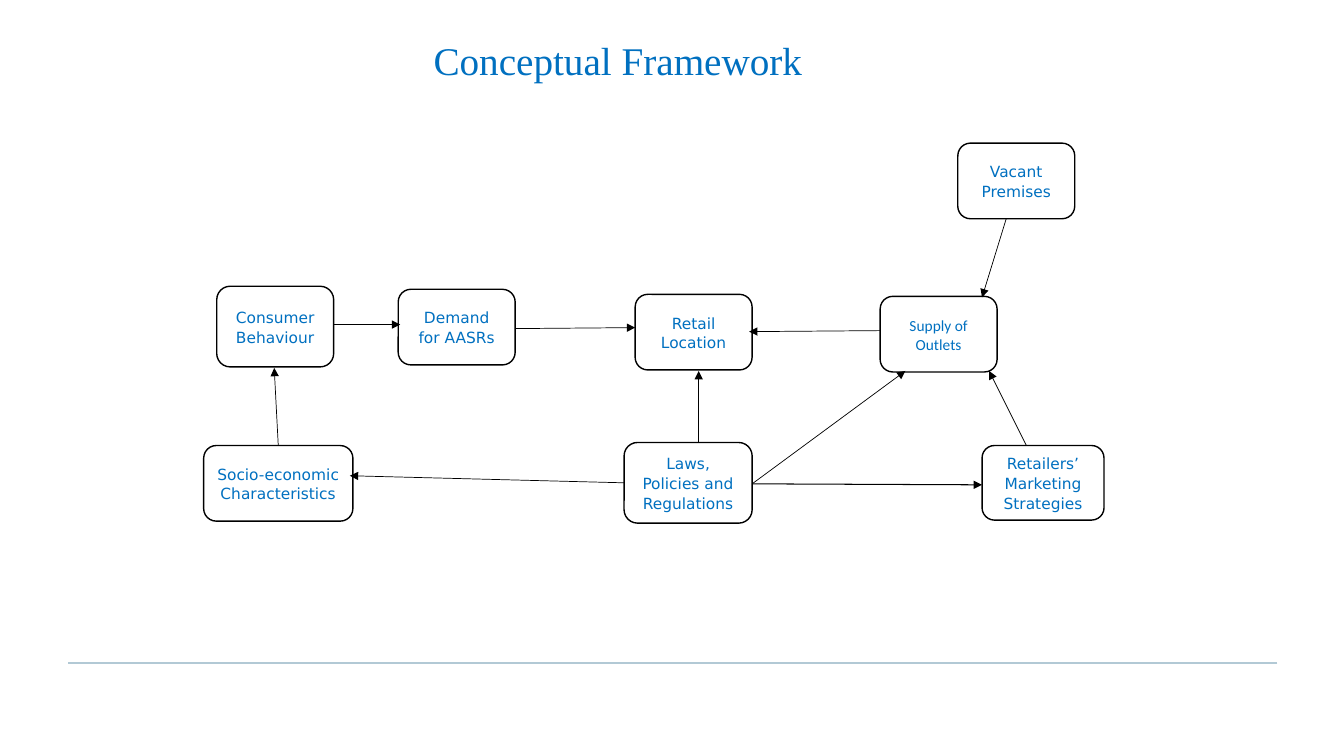
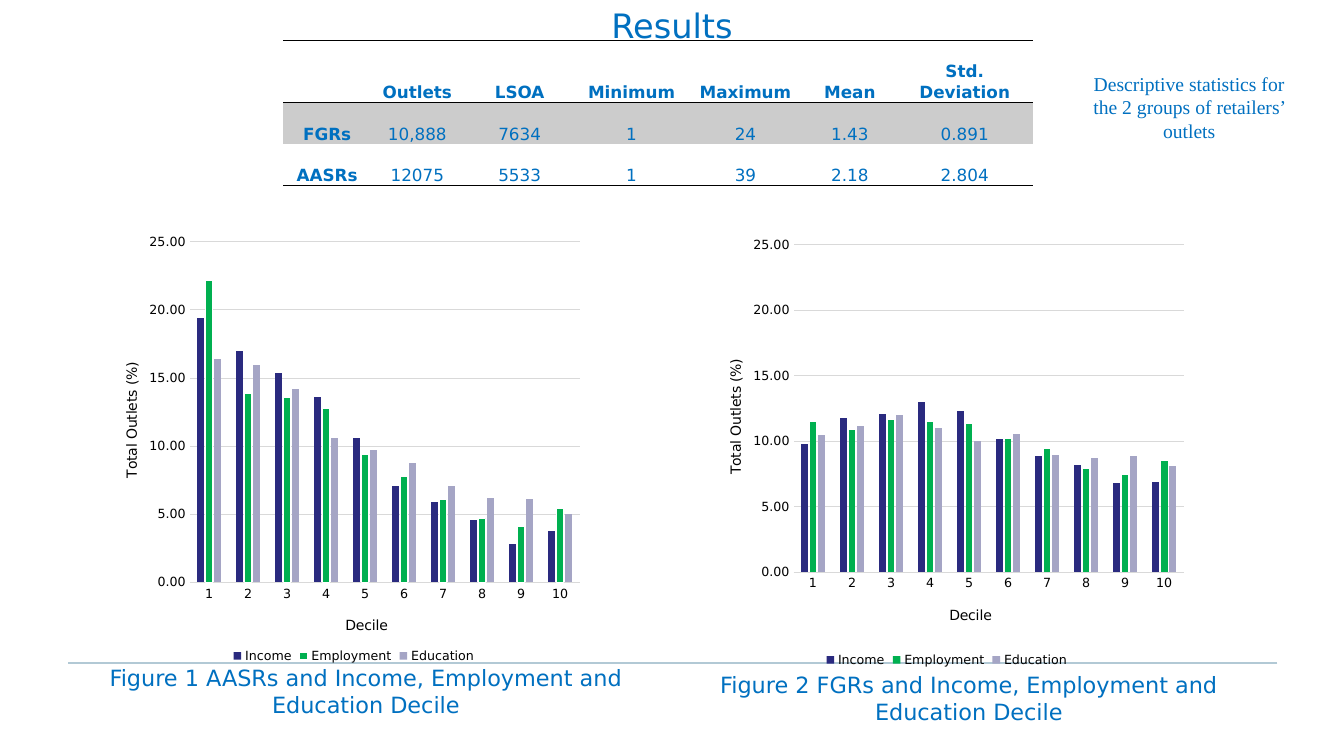
from dataclasses import dataclass

from lxml import etree
from pptx import Presentation
from pptx.chart.data import CategoryChartData
from pptx.dml.color import RGBColor
from pptx.enum.chart import XL_CHART_TYPE, XL_LEGEND_POSITION, XL_TICK_MARK
from pptx.enum.shapes import MSO_CONNECTOR, MSO_SHAPE
from pptx.enum.text import MSO_ANCHOR, MSO_AUTO_SIZE, PP_ALIGN
from pptx.oxml.ns import qn
from pptx.util import Inches, Pt

CLUSTERED = XL_CHART_TYPE.COLUMN_CLUSTERED
LEGEND_BOTTOM = XL_LEGEND_POSITION.BOTTOM
NO_TICKS = XL_TICK_MARK.NONE
STRAIGHT = MSO_CONNECTOR.STRAIGHT
ROUNDED = MSO_SHAPE.ROUNDED_RECTANGLE
TOP, MIDDLE, BOTTOM = MSO_ANCHOR.TOP, MSO_ANCHOR.MIDDLE, MSO_ANCHOR.BOTTOM
LEFT, CENTER = PP_ALIGN.LEFT, PP_ALIGN.CENTER
FIXED_SIZE = MSO_AUTO_SIZE.NONE
TITLE_ONLY = 5
PLAIN_TABLE = "{2D5ABB26-0587-4C30-8999-92F81FD0307C}"


@dataclass(frozen=True)
class Theme:
    """Colours, fonts and type sizes of the deck."""
    text: str = "0070C0"
    ink: str = "000000"
    paper: str = "FFFFFF"
    rule: str = "B2C9D5"
    grid: str = "D9D9D9"
    band: str = "CCCCCC"
    series: tuple = ("2A2A7F", "00B050", "A5A5C5")
    sans: str = "DejaVu Sans"
    serif: str = "Times New Roman"
    narrow: str = "Calibri"
    framework_title: int = 28
    results_title: int = 24
    caption: int = 16
    note: int = 14
    table: int = 12
    node: int = 11
    axis_title: int = 10
    axis: int = 9
    spacing: float = 1.07


THEME = Theme()

NODES = [
    ("Retail Location", (6.3, 2.92, 1.16, 0.75), THEME.sans),
    ("Vacant Premises", (9.5, 1.42, 1.16, 0.75), THEME.sans),
    ("Laws, Policies and Regulations", (6.19, 4.39, 1.27, 0.8), THEME.sans),
    ("Demand for AASRs", (3.95, 2.87, 1.16, 0.75), THEME.sans),
    ("Supply of Outlets", (8.73, 2.94, 1.16, 0.75), THEME.narrow),
    ("Consumer Behaviour", (2.15, 2.84, 1.16, 0.8), THEME.sans),
    ("Socio-economic Characteristics", (2.02, 4.42, 1.48, 0.75), THEME.sans),
    ("Retailers’ Marketing Strategies", (9.74, 4.42, 1.21, 0.74), THEME.sans),
]
ARROWS = [
    ((6.93, 4.39), (6.93, 3.68), 0.5),
    ((6.19, 4.79), (3.47, 4.72), 0.5),
    ((2.76, 4.42), (2.72, 3.65), 0.5),
    ((3.31, 3.22), (3.97, 3.22), 0.5),
    ((5.11, 3.26), (6.3, 3.25), 0.5),
    ((8.73, 3.28), (7.43, 3.29), 0.5),
    ((9.98, 2.17), (9.74, 2.95), 0.5),
    ((7.46, 4.8), (8.98, 3.68), 0.5),
    ((10.18, 4.42), (9.81, 3.68), 0.5),
    ((7.47, 4.8), (9.74, 4.81), 0.75),
]
STATISTICS = [
    ["", "Outlets", "LSOA", "Minimum", "Maximum", "Mean", "Std. Deviation"],
    ["FGRs", "10,888", "7634", "1", "24", "1.43", "0.891"],
    ["AASRs", "12075", "5533", "1", "39", "2.18", "2.804"],
]
COLUMN_WIDTHS = [0.87, 0.92, 1.11, 1.11, 1.15, 0.92, 1.36]
ROW_HEIGHTS = [0.62, 0.41, 0.41]
FIGURES = [
    {
        "frame": (1.07, 2.27, 4.88, 4.35),
        "plot": (1.88, 2.4, 3.87, 3.38),
        "caption": "Figure 1 AASRs and Income, Employment and Education Decile",
        "caption_area": (0.73, 6.54, 5.8, 0.64),
        "outlined": ["Employment"],
        "series": {
            "Income": [19.4, 17, 15.4, 13.6, 10.6, 7.1, 5.9, 4.6, 2.8, 3.8],
            "Employment": [22.2, 13.9, 13.6, 12.8, 9.4, 7.8, 6.1, 4.7, 4.1, 5.4],
            "Education": [16.4, 16, 14.2, 10.6, 9.7, 8.8, 7.1, 6.2, 6.1, 5],
        },
    },
    {
        "frame": (6.95, 2.27, 4.88, 4.39),
        "plot": (7.87, 2.43, 3.87, 3.25),
        "caption": "Figure 2 FGRs and Income, Employment and Education Decile",
        "caption_area": (6.71, 6.61, 5.8, 0.64),
        "outlined": [],
        "series": {
            "Income": [9.8, 11.8, 12.1, 13, 12.3, 10.2, 8.9, 8.2, 6.8, 6.9],
            "Employment": [11.5, 10.9, 11.6, 11.5, 11.3, 10.2, 9.4, 7.9, 7.4, 8.5],
            "Education": [10.5, 11.2, 12, 11, 10, 10.6, 9, 8.7, 8.9, 8.1],
        },
    },
]


def color(value):
    """Turn a hex string into a colour."""
    return RGBColor.from_string(value)


def apply(target, values):
    """Set each attribute named in a dict of format values."""
    for name, value in values.items():
        setattr(target, name, value)


def set_font(font, size, name=THEME.sans, shade=THEME.text, bold=False):
    """Give a font its face, size, weight and colour."""
    apply(font, {"name": name, "size": Pt(size), "bold": bold})
    font.color.rgb = color(shade)


def write(frame, text, size, name=THEME.sans, align=CENTER, anchor=TOP, wrap=True):
    """Put one formatted paragraph in a text frame."""
    apply(frame, {"text": text, "auto_size": FIXED_SIZE, "word_wrap": wrap,
                  "vertical_anchor": anchor})
    para = frame.paragraphs[0]
    para.alignment = align
    set_font(para.font, size, name)
    return para


def add_page(deck, title, area, **style):
    """Add a title-only slide with its title placed and formatted."""
    page = deck.slides.add_slide(deck.slide_layouts[TITLE_ONLY])
    box = page.shapes.title
    apply(box, dict(zip(("left", "top", "width", "height"), map(Inches, area))))
    write(box.text_frame, title, **style)
    return page


def add_line(page, start, end, shade, width, arrow=False):
    """Draw a straight line, with an arrowhead at its end if asked."""
    line = page.shapes.add_connector(STRAIGHT, *map(Inches, start + end))
    line.line.color.rgb = color(shade)
    line.line.width = Pt(width)
    properties = line.element.spPr
    if arrow:
        etree.SubElement(properties.find(qn("a:ln")), qn("a:tailEnd"), type="triangle")
    etree.SubElement(properties, qn("a:effectLst"))
    return line


def add_footer_rule(page):
    """Place the footer line on the layout that the slides share."""
    rule = add_line(page, (12.67, 6.58), (0.67, 6.58), THEME.rule, 1.25)
    page.slide_layout.shapes.element.append(rule.element)


def add_node(page, text, area, name):
    """Draw one rounded box of the framework."""
    node = page.shapes.add_shape(ROUNDED, *map(Inches, area))
    node.shadow.inherit = False
    node.fill.solid()
    node.fill.fore_color.rgb = color(THEME.paper)
    node.line.color.rgb = color(THEME.ink)
    node.line.width = Pt(1)
    para = write(node.text_frame, text, THEME.node, name, anchor=MIDDLE)
    para.line_spacing = THEME.spacing


def add_label(page, text, area, size, name=THEME.sans):
    """Add a centred text box."""
    box = page.shapes.add_textbox(*map(Inches, area))
    write(box.text_frame, text, size, name)


def add_border(cell, side):
    """Draw a thin line on one side of a cell."""
    border = etree.SubElement(cell._tc.get_or_add_tcPr(), qn(f"a:{side}"), w=str(Pt(1)))
    fill = etree.SubElement(border, qn("a:solidFill"))
    etree.SubElement(fill, qn("a:srgbClr"), val=THEME.ink)


def add_statistics(page):
    """Add the table of descriptive statistics."""
    size = (sum(COLUMN_WIDTHS), sum(ROW_HEIGHTS))
    frame = page.shapes.add_table(len(ROW_HEIGHTS), len(COLUMN_WIDTHS),
                                  *map(Inches, (2.81, 0.4) + size))
    for style in frame.element.iter(qn("a:tableStyleId")):
        style.text = PLAIN_TABLE
    table = frame.table
    table.horz_banding = False
    for column, width in zip(table.columns, COLUMN_WIDTHS):
        column.width = Inches(width)
    for row, height in zip(table.rows, ROW_HEIGHTS):
        row.height = Inches(height)
    sides = [("lnT", "lnB"), (), ("lnB",)]
    for row, texts in enumerate(STATISTICS):
        for column, text in enumerate(texts):
            cell = table.cell(row, column)
            apply(cell, {"text": text, "vertical_anchor": BOTTOM,
                         "margin_left": Inches(0.07), "margin_right": Inches(0.07),
                         "margin_top": 0, "margin_bottom": 0})
            for side in sides[row]:
                add_border(cell, side)
            if row == 1:
                cell.fill.solid()
                cell.fill.fore_color.rgb = color(THEME.band)
            else:
                cell.fill.background()
            para = cell.text_frame.paragraphs[0]
            apply(para, {"alignment": CENTER, "line_spacing": THEME.spacing})
            set_font(para.font, THEME.table, bold=row == 0 or column == 0)


def place(part, frame, left, top, width=None, height=None):
    """Fix a chart part at a slide position given in inches."""
    for old in part.findall(qn("c:layout")):
        part.remove(old)
    layout = etree.Element(qn("c:layout"))
    part.insert(0 if part.find(qn("c:tx")) is None else 1, layout)
    manual = etree.SubElement(layout, qn("c:manualLayout"))
    values = {"xMode": "edge", "yMode": "edge",
              "x": (left - frame[0]) / frame[2], "y": (top - frame[1]) / frame[3]}
    if width:
        values = {"layoutTarget": "inner", **values,
                  "w": width / frame[2], "h": height / frame[3]}
    for name, value in values.items():
        etree.SubElement(manual, qn(f"c:{name}"), val=str(value))


def title_axis(axis, text, frame, left, top, rotation):
    """Give an axis a placed and turned title."""
    title = axis.axis_title
    title.text_frame.text = text
    set_font(title.text_frame.paragraphs[0].font, THEME.axis_title, shade=THEME.ink)
    for body in title.element.iter(qn("a:bodyPr")):
        body.set("rot", str(rotation))
    place(title.element, frame, left, top)


def add_figure(page, figure):
    """Add one column chart and its caption."""
    data = CategoryChartData()
    data.categories = [str(decile) for decile in range(1, 11)]
    for name, values in figure["series"].items():
        data.add_series(name, values)
    frame, plot_area = figure["frame"], figure["plot"]
    chart = page.shapes.add_chart(CLUSTERED, *map(Inches, frame), data).chart
    apply(chart, {"has_title": False, "has_legend": True})
    set_font(chart.font, THEME.axis_title, shade=THEME.ink)
    apply(chart.legend, {"position": LEGEND_BOTTOM, "include_in_layout": False})
    set_font(chart.legend.font, THEME.axis, shade=THEME.ink)

    plot = chart.plots[0]
    apply(plot, {"gap_width": 219, "overlap": -27, "vary_by_categories": False})
    for series, shade in zip(plot.series, THEME.series):
        series.format.fill.solid()
        series.format.fill.fore_color.rgb = color(shade)
        if series.name in figure["outlined"]:
            series.format.line.color.rgb = color(THEME.paper)
            series.format.line.width = Pt(0.75)

    deciles, outlets = chart.category_axis, chart.value_axis
    for axis in (deciles, outlets):
        apply(axis, {"major_tick_mark": NO_TICKS, "minor_tick_mark": NO_TICKS})
        set_font(axis.tick_labels.font, THEME.axis, shade=THEME.ink)
    apply(outlets, {"minimum_scale": 0, "maximum_scale": 25, "major_unit": 5})
    apply(outlets.tick_labels, {"number_format": "0.00", "number_format_is_linked": False})
    outlets.format.line.fill.background()
    for line in (deciles.format.line, outlets.major_gridlines.format.line):
        line.color.rgb = color(THEME.grid)
        line.width = Pt(0.75)

    left, top, _, height = plot_area
    title_axis(deciles, "Decile", frame, left + 1.52, top + height + 0.31, 0)
    title_axis(outlets, "Total Outlets (%)", frame, left - 0.69, top + height / 2 - 0.52, -5400000)
    place(chart.element.find(f".//{qn('c:plotArea')}"), frame, *plot_area)
    add_label(page, figure["caption"], figure["caption_area"], THEME.caption)


def main():
    """Build and save the deck."""
    deck = Presentation()
    apply(deck, {"slide_width": Inches(13.33), "slide_height": Inches(7.5)})

    page = add_page(deck, "Conceptual Framework", (4.2, 0.31, 3.9, 0.57),
                    size=THEME.framework_title, name=THEME.serif, align=LEFT, wrap=False)
    add_footer_rule(page)
    for node in NODES:
        add_node(page, *node)
    for start, end, width in ARROWS:
        add_line(page, start, end, THEME.ink, width, arrow=True)

    page = add_page(deck, "Results", (0, 0, 13.33, 0.5), size=THEME.results_title)
    add_statistics(page)
    add_label(page, "Descriptive statistics for the 2 groups of retailers’ outlets",
              (10.74, 0.66, 2.11, 0.81), THEME.note, THEME.serif)
    for figure in FIGURES:
        add_figure(page, figure)
    deck.save("out.pptx")


if __name__ == "__main__":
    main()
